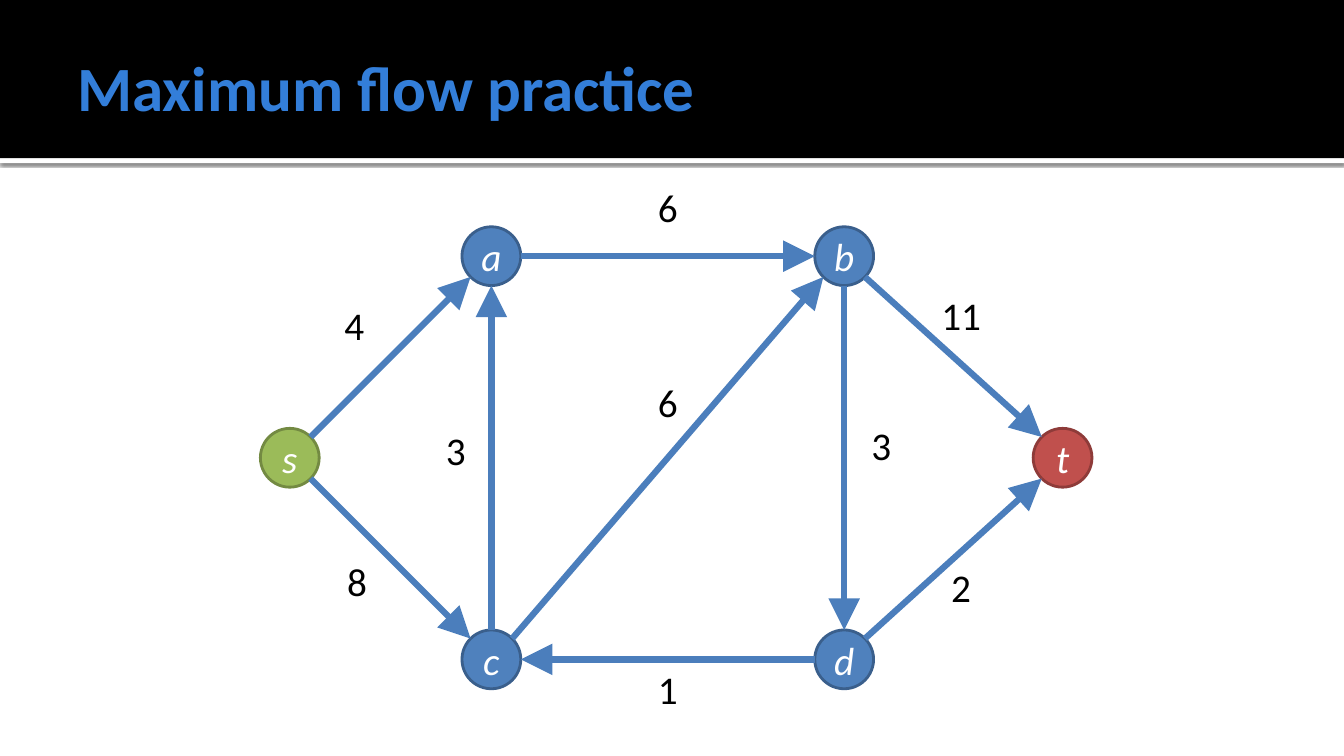
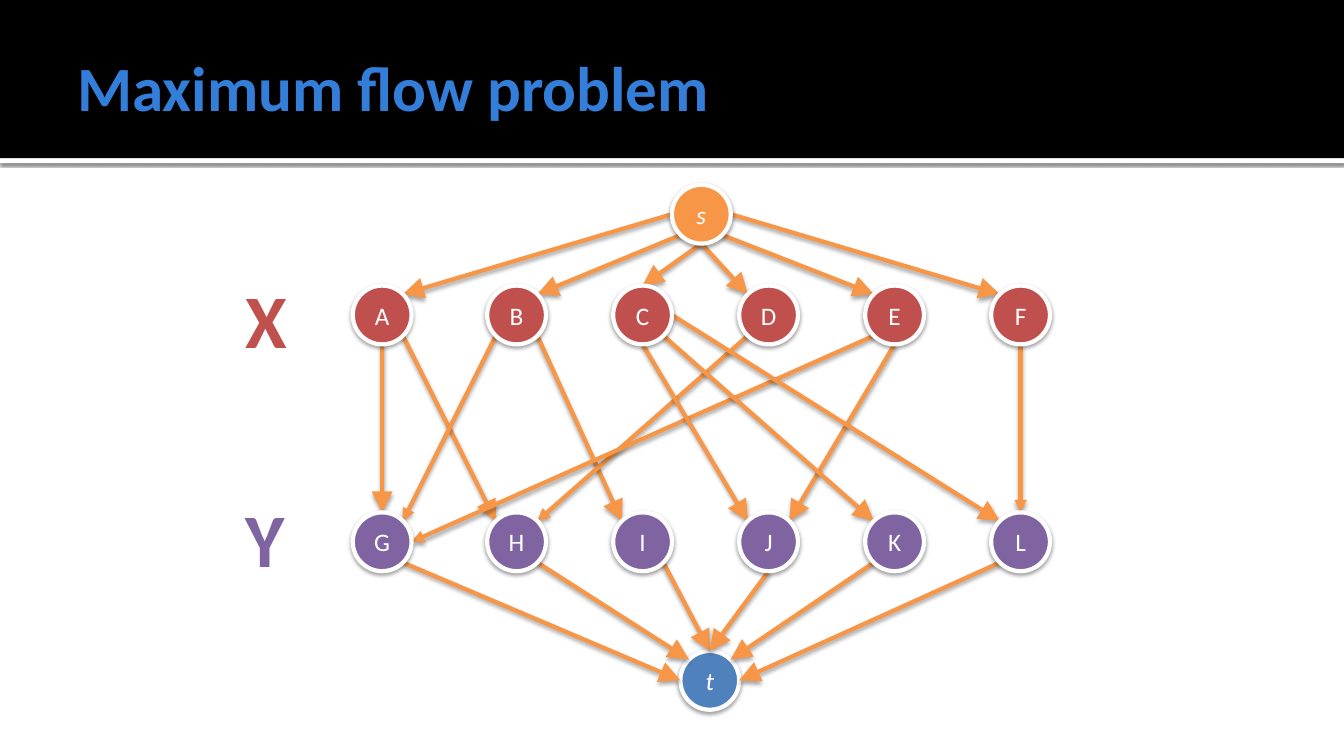
import math
from dataclasses import dataclass

import lxml.etree
import pptx
import pptx.dml.color
import pptx.enum.shapes
import pptx.enum.text
import pptx.oxml.ns
import pptx.util

Pt = pptx.util.Pt
qn = pptx.oxml.ns.qn
SHAPE = pptx.enum.shapes.MSO_SHAPE
ANCHOR = pptx.enum.text.MSO_ANCHOR
ALIGN = pptx.enum.text.PP_ALIGN


@dataclass(frozen=True)
class Theme:
    font: str = "Calibri"
    black: str = "000000"
    white: str = "FFFFFF"
    title: str = "337ED9"
    blue: str = "4F81BD"
    blue_edge: str = "4B7EBC"
    blue_rim: str = "3A5F8C"
    green: str = "9BBB59"
    green_rim: str = "738A42"
    red: str = "C0504D"
    red_rim: str = "8E3B39"
    purple: str = "8064A2"
    orange: str = "F79646"
    title_size: int = 45
    set_size: int = 54
    label_size: int = 28
    node_size: int = 18


@dataclass(frozen=True)
class Shadow:
    opacity: int
    blur: float
    distance: float


THEME = Theme()
STRIP_SHADOW = Shadow(60, 2.5, 0.8)
NODE_SHADOW = Shadow(38, 3.1, 1.6)
EDGE_SHADOW = Shadow(35, 3.1, 1.8)

WIDTH, HEIGHT = 960, 540
BAND_HEIGHT = 113
DIAMETER = 42
# Connection sites of an ellipse, anticlockwise from the top
SITES = ["N", "NW", "W", "SW", "S", "SE", "E", "NE"]


def rgb(color):
    return pptx.dml.color.RGBColor.from_string(color)


def set_effects(shape, shadow=None):
    """Replace the inherited shadow by the given one, or by none."""
    properties = shape._element.spPr
    effects = properties.find(qn("a:effectLst"))
    if effects is None:
        effects = lxml.etree.SubElement(properties, qn("a:effectLst"))
    if shadow:
        outer = lxml.etree.SubElement(
            effects, qn("a:outerShdw"), blurRad=str(Pt(shadow.blur)),
            dist=str(Pt(shadow.distance)), dir="5400000", rotWithShape="0")
        color = lxml.etree.SubElement(outer, qn("a:srgbClr"), val=THEME.black)
        lxml.etree.SubElement(color, qn("a:alpha"), val=str(shadow.opacity * 1000))


def add_filled(page, kind, left, top, width, height, fill, rim=None, rim_width=0, shadow=None):
    shape = page.shapes.add_shape(kind, Pt(left), Pt(top), Pt(width), Pt(height))
    shape.fill.solid()
    shape.fill.fore_color.rgb = rgb(fill)
    if rim:
        shape.line.color.rgb = rgb(rim)
        shape.line.width = Pt(rim_width)
    else:
        shape.line.fill.background()
    shape.shadow.inherit = False
    set_effects(shape, shadow)
    return shape


def write(shape, text, size, color, align=ALIGN.LEFT, bold=False, italic=False):
    para = shape.text_frame.paragraphs[0]
    para.text = text
    para.alignment = align
    font = para.font
    font.name, font.size, font.color.rgb = THEME.font, Pt(size), rgb(color)
    font.bold, font.italic = bold, italic


def add_text(page, left, top, width, height, text, size, color, **style):
    box = page.shapes.add_textbox(Pt(left), Pt(top), Pt(width), Pt(height))
    box.text_frame.word_wrap = True
    write(box, text, size, color, **style)
    return box


def add_page(deck, title):
    """Blank page with the shared band, strip and title."""
    page = deck.slides.add_slide(deck.slide_layouts[6])
    add_filled(page, SHAPE.RECTANGLE, 0, BAND_HEIGHT, WIDTH, 3.6, THEME.white,
               shadow=STRIP_SHADOW)
    add_filled(page, SHAPE.RECTANGLE, 0, 0, WIDTH, BAND_HEIGHT, THEME.black)
    box = add_text(page, 48, 12, 864, 99, title, THEME.title_size, THEME.title, bold=True)
    frame = box.text_frame
    frame.vertical_anchor = ANCHOR.MIDDLE
    frame.margin_left, frame.margin_right = Pt(7.2), Pt(3.6)
    return page


def add_node(page, name, center, size, fill, rim, rim_width, shadow=None):
    x, y = center
    node = add_filled(page, SHAPE.OVAL, x - DIAMETER / 2, y - DIAMETER / 2,
                      DIAMETER, DIAMETER, fill, rim, rim_width, shadow)
    node.text_frame.vertical_anchor = ANCHOR.MIDDLE
    write(node, name, size, THEME.white, ALIGN.CENTER, italic=name.islower())
    return node


def site_point(node, site):
    angle = math.radians(90 + 45 * SITES.index(site))
    radius = node.width / 2
    return (round(node.left + radius + radius * math.cos(angle)),
            round(node.top + radius - radius * math.sin(angle)))


def add_edge(page, start, start_site, end, end_site, color, width, head="lg", shadow=None):
    """Arrow glued to one site of each of two round nodes."""
    edge = page.shapes.add_connector(
        pptx.enum.shapes.MSO_CONNECTOR.STRAIGHT,
        *site_point(start, start_site), *site_point(end, end_site))
    edge.line.color.rgb = rgb(color)
    edge.line.width = Pt(width)
    line = edge.line._get_or_add_ln()
    lxml.etree.SubElement(line, qn("a:tailEnd"), type="triangle", w=head, len=head)
    set_effects(edge, shadow)
    joints = edge._element.find(qn("p:nvCxnSpPr")).find(qn("p:cNvCxnSpPr"))
    for tag, node, site in (("a:stCxn", start, start_site), ("a:endCxn", end, end_site)):
        lxml.etree.SubElement(joints, qn(tag), id=str(node.shape_id),
                              idx=str(SITES.index(site)))


def build_practice(deck):
    page = add_page(deck, "Maximum flow practice")

    # Nodes
    inner = (THEME.blue, THEME.blue_rim)
    nodes = {
        name: add_node(page, name, center, THEME.label_size, *colors, 2)
        for name, center, colors in (
            ("s", (207, 327), (THEME.green, THEME.green_rim)),
            ("t", (759, 327), (THEME.red, THEME.red_rim)),
            ("a", (351, 183), inner),
            ("b", (603, 183), inner),
            ("c", (351, 471), inner),
            ("d", (603, 471), inner),
        )
    }

    # Edges, each with its capacity and the corner of that label
    for start, start_site, end, end_site, capacity, left, top in (
        ("s", "NE", "a", "SW", 4, 229, 212),
        ("a", "E", "b", "W", 6, 453, 127.5),
        ("b", "S", "d", "N", 3, 605.5, 297.5),
        ("b", "SE", "t", "NW", 11, 662.5, 204.5),
        ("d", "W", "c", "E", 1, 453, 471.5),
        ("s", "SE", "c", "NW", 8, 231, 394.5),
        ("d", "NE", "t", "SW", 2, 662.5, 399),
        ("c", "NE", "b", "SW", 6, 453, 267),
        ("c", "N", "a", "S", 3, 301.5, 301),
    ):
        add_edge(page, nodes[start], start_site, nodes[end], end_site, THEME.blue_edge, 4.5)
        add_text(page, left, top, 48, 41, str(capacity), THEME.label_size,
                 THEME.black, align=ALIGN.CENTER)


def build_problem(deck):
    page = add_page(deck, "Maximum flow problem")

    # Names of the two sets
    for name, top, color in (("X", 191.5, THEME.red), ("Y", 348, THEME.purple)):
        add_text(page, 168, top, 66, 73, name, THEME.set_size, color, bold=True)

    # Source, sink and the two rows
    columns = [273] + [369 + 90 * step for step in range(5)]
    places = [("t", (507, 486), THEME.blue), ("s", (501, 153), THEME.orange)]
    for names, y, color in (("ABCDEF", 225, THEME.red), ("GHIJKL", 387, THEME.purple)):
        places += [(name, (x, y), color) for name, x in zip(names, columns)]
    nodes = {
        name: add_node(page, name, center, THEME.node_size, color, THEME.white, 3, NODE_SHADOW)
        for name, center, color in places
    }

    # Edges: start, its site, end, its site
    small_heads = {"BG", "DH", "EG", "FL"}
    for start, start_site, end, end_site in (
        edge.split() for edge in (
            "A S G N", "A SE H NW", "B SW G NE", "B SE I NW", "D SW H NE", "E SW G E",
            "E S J NE", "C S J NW", "C SE K NW", "C E L NW", "F S L N",
            "G SE t W", "H SE t NW", "I SE t N", "J S t N", "K SW t NE", "L SW t E",
            "s W A NE", "s SW B NE", "s S C N", "s S D NW", "s SE E NW", "s E F NW",
        )
    ):
        head = "med" if start + end in small_heads else "lg"
        add_edge(page, nodes[start], start_site, nodes[end], end_site,
                 THEME.orange, 3, head, EDGE_SHADOW)

    # All nodes but the sink lie over the edges
    for name, node in nodes.items():
        if name != "t":
            page.shapes._spTree.append(node._element)


def main():
    deck = pptx.Presentation()
    deck.slide_width, deck.slide_height = Pt(WIDTH), Pt(HEIGHT)
    build_practice(deck)
    build_problem(deck)
    deck.save("out.pptx")


if __name__ == "__main__":
    main()
